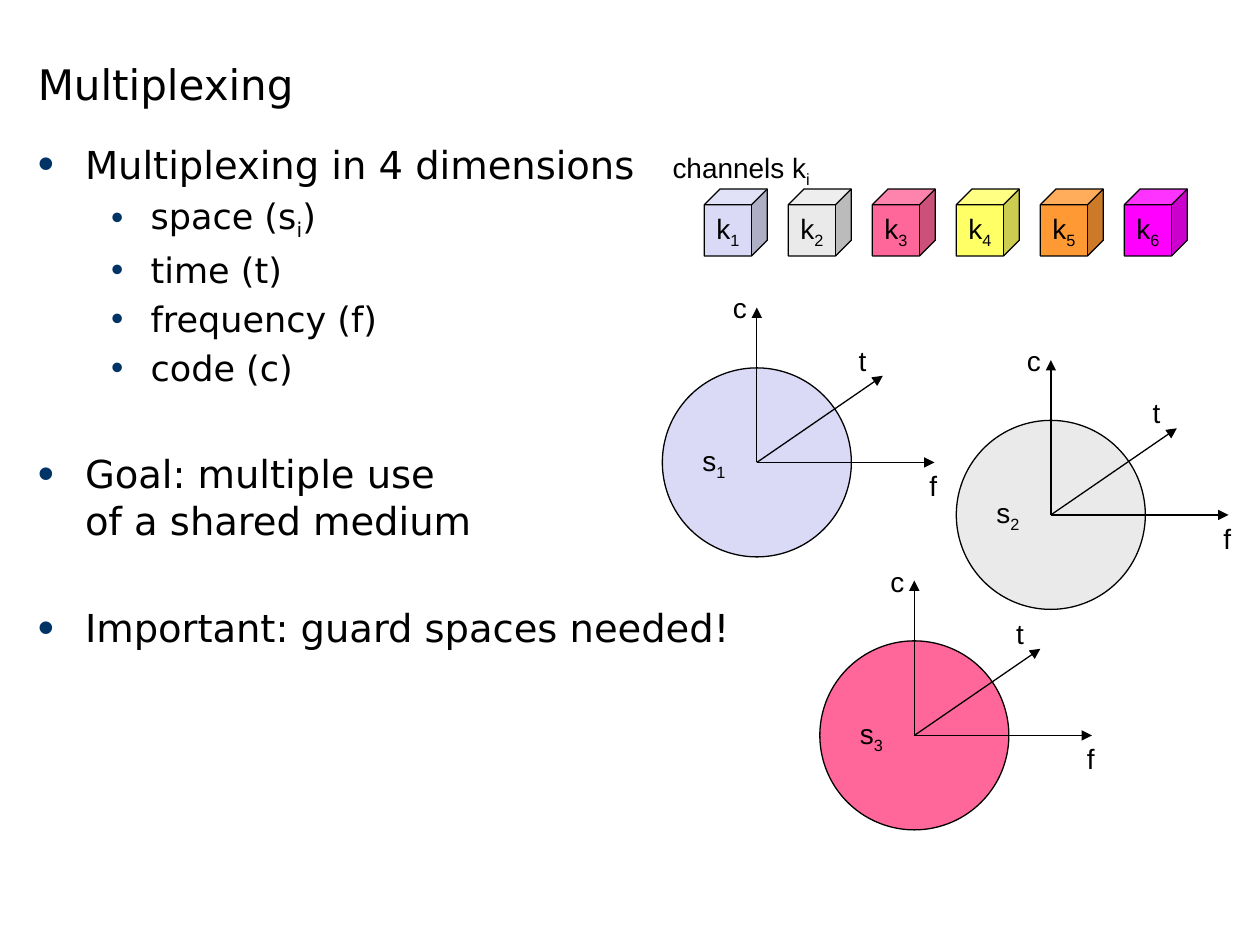
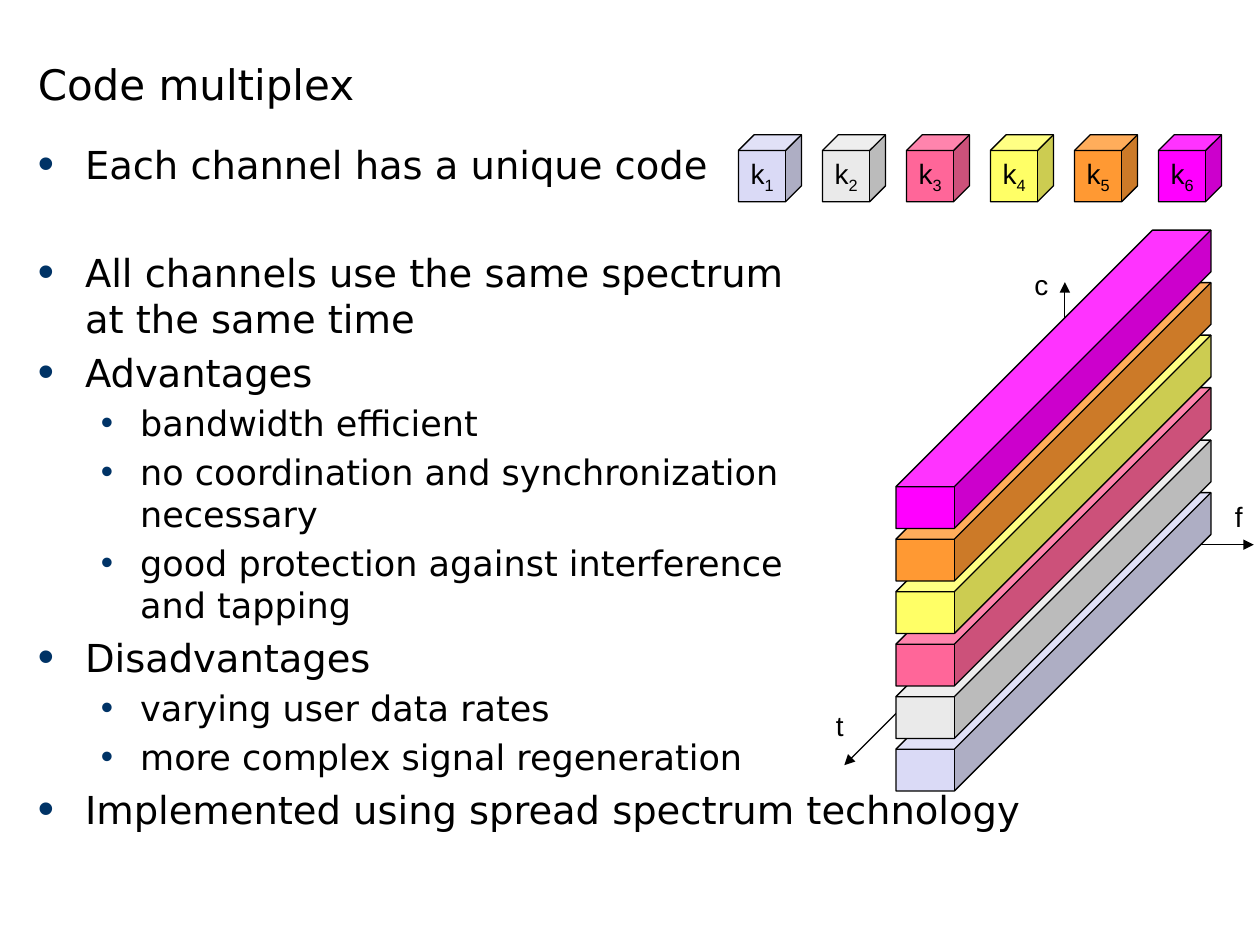
"""Builds two slides on multiplexing: the four dimensions and code multiplex."""
import dataclasses

import lxml.etree
import pptx
import pptx.dml.color
import pptx.enum.shapes
import pptx.enum.text
import pptx.oxml.ns
import pptx.util

Pt = pptx.util.Pt
Shapes = pptx.enum.shapes.MSO_SHAPE
Align = pptx.enum.text.PP_ALIGN
Anchor = pptx.enum.text.MSO_ANCHOR


@dataclasses.dataclass(frozen=True)
class Theme:
    text_font: str = "DejaVu Sans"
    label_font: str = "Arial"
    ink: str = "000000"
    bullet: str = "003366"
    channels: tuple = ("DADAF6", "EAEAEA", "FF6699", "FFFF66", "FF9933", "FF00FF")
    title_size: int = 24
    body_sizes: tuple = (22, 20)
    label_size: int = 16
    bullet_percents: tuple = (120, 100)
    hanging: tuple = (27, 22.5)
    line_width: float = 0.75


THEME = Theme()

# Body rows are (level, text, opens a new section); text between bars is subscript.
MULTIPLEXING = {
    "title": "Multiplexing",
    "level_indents": (27, 64.5),
    "body": [
        (0, "Multiplexing in 4 dimensions", False),
        (1, "space (s|i|)", False),
        (1, "time (t)", False),
        (1, "frequency (f)", False),
        (1, "code (c)", False),
        (0, "Goal: multiple use \nof a shared medium", True),
        (0, "Important: guard spaces needed!", True),
    ],
    "cubes_at": (402.5, 108),
}
CODE_MULTIPLEX = {
    "title": "Code multiplex",
    "level_indents": (27, 58.5),
    "body": [
        (0, "Each channel has a unique code", False),
        (0, "All channels use the same spectrum \nat the same time", True),
        (0, "Advantages", False),
        (1, "bandwidth efficient", False),
        (1, "no coordination and synchronization\nnecessary", False),
        (1, "good protection against interference\nand tapping", False),
        (0, "Disadvantages", False),
        (1, "varying user data rates", False),
        (1, "more complex signal regeneration", False),
        (0, "Implemented using spread spectrum technology", False),
    ],
    "cubes_at": (422, 77),
}

# Each axis maps to its tip and its label corner, both measured from the origin.
SPACE_AXES = {
    "t": ((72, -49.5), (51, -71.5)),
    "c": ((0, -88.5), (-20.75, -101.5)),
    "f": ((101.5, 0), (91.5, 0)),
}
CODE_AXES = {
    "t": ((-126, 126), (-138, 90)),
    "c": ((0, -150), (-24.5, -162)),
    "f": ((108, 0), (90, -29.5)),
}
LABEL_WIDTHS = {"t": 18.75, "c": 22.25, "f": 18.75}
LABEL_HEIGHT = 26.5
SPACE_CENTRES = [(432.5, 264.25), (600.5, 294.25), (522.5, 420.25)]
BALL = 108
CUBE_SIZE, CUBE_PITCH = (36, 38.25), 48
CODE_ORIGIN = (608.5, 311.25)
BAR_SIZE, BAR_AT, BAR_STEP = (180, 170.5), (512, 281.5), 30


def rgb(code):
    return pptx.dml.color.RGBColor.from_string(code)


def lengths(*values):
    return [Pt(value) for value in values]


def style(para, font, size):
    para.font.name = font
    para.font.size = Pt(size)
    para.font.color.rgb = rgb(THEME.ink)


def write(para, text):
    for part_index, part in enumerate(text.split("|")):
        for line_index, line in enumerate(part.split("\n")):
            if line_index:
                para.add_line_break()
            span = para.add_run()
            span.text = line
            if part_index % 2:
                span._r.get_or_add_rPr().set("baseline", "-25000")


def write_label(box, text, align=Align.LEFT):
    box.text_frame.word_wrap = False
    para = box.text_frame.paragraphs[0]
    para.alignment = align
    style(para, THEME.label_font, THEME.label_size)
    write(para, text)


def add_label(page, text, left, top, width):
    box = page.shapes.add_textbox(*lengths(left, top, width, LABEL_HEIGHT))
    box.text_frame.auto_size = pptx.enum.text.MSO_AUTO_SIZE.SHAPE_TO_FIT_TEXT
    write_label(box, text)


def add_solid(page, kind, place, color):
    solid = page.shapes.add_shape(kind, *lengths(*place))
    solid.shadow.inherit = False
    solid.fill.solid()
    solid.fill.fore_color.rgb = rgb(color)
    solid.line.color.rgb = rgb(THEME.ink)
    solid.line.width = Pt(THEME.line_width)
    solid.text_frame.vertical_anchor = Anchor.MIDDLE
    return solid


def add_arrow(page, start, end):
    arrow = page.shapes.add_connector(
        pptx.enum.shapes.MSO_CONNECTOR.STRAIGHT, *lengths(*start, *end))
    arrow.line.color.rgb = rgb(THEME.ink)
    arrow.line.width = Pt(THEME.line_width)
    qn = pptx.oxml.ns.qn
    lxml.etree.SubElement(arrow.line._get_or_add_ln(), qn("a:tailEnd"), type="triangle")
    lxml.etree.SubElement(arrow._element.spPr, qn("a:effectLst"))


def offset(origin, shift):
    return origin[0] + shift[0], origin[1] + shift[1]


def add_axis_arrows(page, origin, axes):
    for tip, _ in axes.values():
        add_arrow(page, origin, offset(origin, tip))


def add_axis_labels(page, origin, axes):
    for name, (_, corner) in axes.items():
        add_label(page, name, *offset(origin, corner), LABEL_WIDTHS[name])


def add_bullet(para, level, indent):
    qn = pptx.oxml.ns.qn
    props = para._p.get_or_add_pPr()
    props.set("marL", str(Pt(indent)))
    props.set("indent", str(-Pt(THEME.hanging[level])))
    color = lxml.etree.SubElement(props, qn("a:buClr"))
    lxml.etree.SubElement(color, qn("a:srgbClr"), val=THEME.bullet)
    percent = THEME.bullet_percents[level] * 1000
    lxml.etree.SubElement(props, qn("a:buSzPct"), val=str(percent))
    lxml.etree.SubElement(props, qn("a:buFont"), typeface=THEME.label_font)
    lxml.etree.SubElement(props, qn("a:buChar"), char="•")


def add_body(page, rows, indents):
    box = page.shapes.add_textbox(*lengths(14.5, 77, 692, 421))
    box.text_frame.word_wrap = True
    section_gap = THEME.body_sizes[0] * 1.4
    for index, (level, text, opens_section) in enumerate(rows):
        para = box.text_frame.paragraphs[0] if index == 0 else box.text_frame.add_paragraph()
        size = THEME.body_sizes[level]
        para.level = level
        add_bullet(para, level, indents[level])
        if index:
            para.space_before = Pt(size * 0.2 + section_gap * opens_section)
        style(para, THEME.text_font, size)
        write(para, text)


def add_cubes(page, left, top):
    for index, color in enumerate(THEME.channels):
        place = (left + index * CUBE_PITCH, top, *CUBE_SIZE)
        cube = add_solid(page, Shapes.CUBE, place, color)
        cube.adjustments[0] = 0.25
        write_label(cube, f"k|{index + 1}|", Align.CENTER)


def add_page(deck, content):
    page = deck.slides.add_slide(deck.slide_layouts[6])
    title = page.shapes.add_textbox(*lengths(14.5, 0, 476, 65.5))
    title.text_frame.word_wrap = True
    title.text_frame.vertical_anchor = Anchor.BOTTOM
    para = title.text_frame.paragraphs[0]
    style(para, THEME.text_font, THEME.title_size)
    write(para, content["title"])
    add_body(page, content["body"], content["level_indents"])
    add_cubes(page, *content["cubes_at"])
    return page


def add_spaces(page):
    add_label(page, "channels k|i|", 377.25, 82.75, 93.5)
    for index, centre in enumerate(SPACE_CENTRES):
        place = (*offset(centre, (-BALL / 2, -BALL / 2)), BALL, BALL)
        ball = add_solid(page, Shapes.OVAL, place, THEME.channels[index])
        write_label(ball, f"s|{index + 1}|")
    for centre in SPACE_CENTRES:
        add_axis_arrows(page, centre, SPACE_AXES)
        add_axis_labels(page, centre, SPACE_AXES)


def add_code_stack(page):
    add_axis_arrows(page, CODE_ORIGIN, CODE_AXES)
    for index, color in enumerate(THEME.channels):
        place = (*offset(BAR_AT, (0, -index * BAR_STEP)), *BAR_SIZE)
        bar = add_solid(page, Shapes.CUBE, place, color)
        bar.adjustments[0] = 0.86
    add_axis_labels(page, CODE_ORIGIN, CODE_AXES)


def main():
    deck = pptx.Presentation()
    deck.slide_width, deck.slide_height = Pt(720), Pt(540)
    add_spaces(add_page(deck, MULTIPLEXING))
    add_code_stack(add_page(deck, CODE_MULTIPLEX))
    deck.save("out.pptx")


if __name__ == "__main__":
    main()
